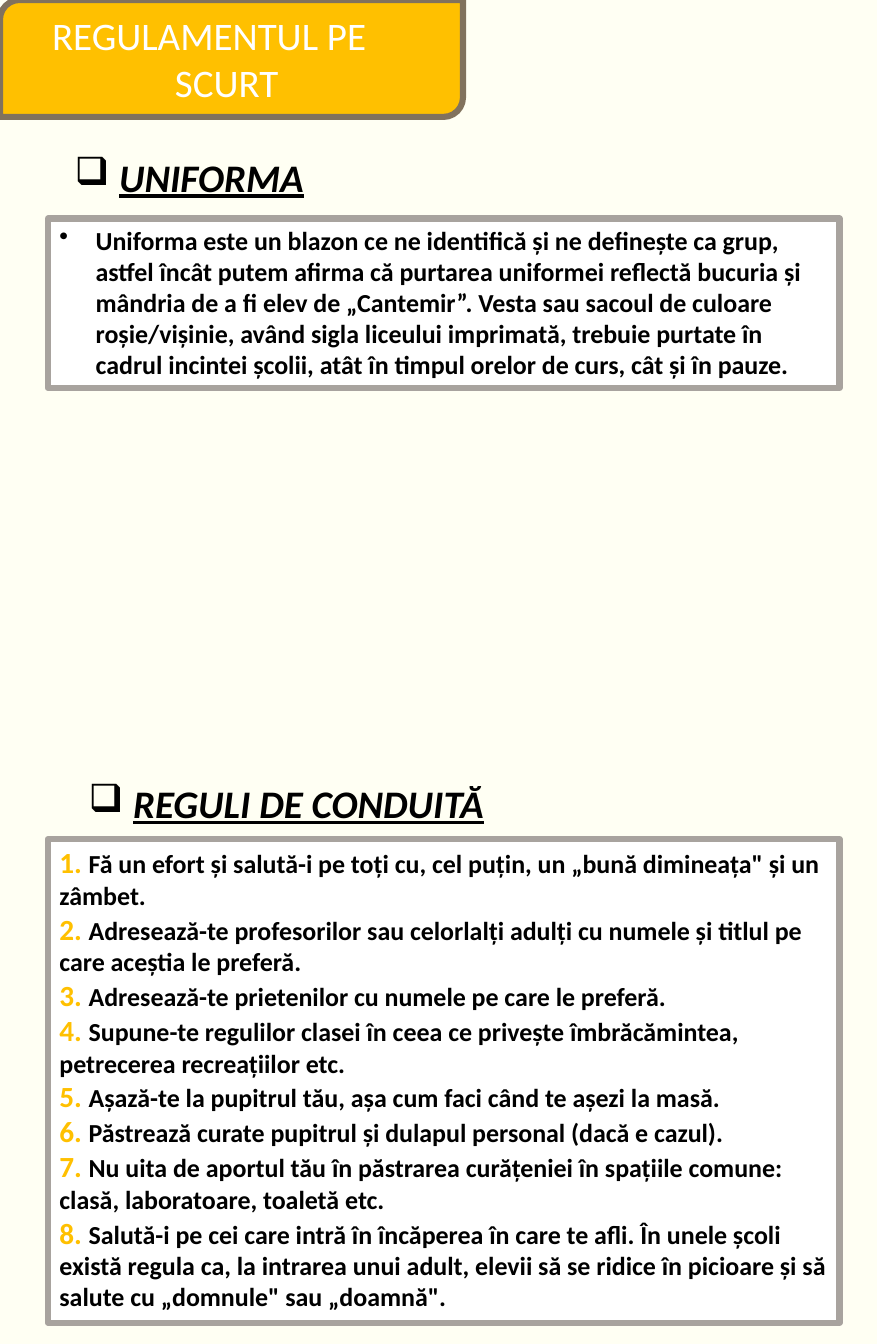
import pptx
import pptx.util
import pptx.oxml
import pptx.oxml.ns
import pptx.dml.color
import pptx.enum.shapes
import pptx.enum.text

WIDE, HIGH = 7.5, 11.5
GOLD, BLACK, WHITE = "FFC000", "000000", "FFFFFF"
TITLE = ["REGULAMENTUL PE", "SCURT"]
HEADS = [
    ("UNIFORMA", (7.2, 10.96, 48.27, 4.35)),
    ("REGULI DE CONDUITĂ", (8.8, 57.57, 48.27, 4.35)),
]
INTRO = "Uniforma este un blazon ce ne identifică și ne definește ca grup, astfel încât putem afirma că purtarea uniformei reflectă bucuria și mândria de a fi elev de „Cantemir”. Vesta sau sacoul de culoare roșie/vișinie, având sigla liceului imprimată, trebuie purtate în cadrul incintei școlii, atât în timpul orelor de curs, cât și în pauze."
RULES = [
    "Fă un efort și salută-i pe toți cu, cel puțin, un „bună dimineața\" și un zâmbet.",
    "Adresează-te profesorilor sau celorlalți adulți cu numele și titlul pe care aceștia le preferă.",
    "Adresează-te prietenilor cu numele pe care le preferă.",
    "Supune-te regulilor clasei în ceea ce privește îmbrăcămintea, petrecerea recreațiilor etc.",
    "Așază-te la pupitrul tău, așa cum faci când te așezi la masă.",
    "Păstrează curate pupitrul și dulapul personal (dacă e cazul).",
    "Nu uita de aportul tău în păstrarea curățeniei în spațiile comune: clasă, laboratoare, toaletă etc.",
    "Salută-i pe cei care intră în încăperea în care te afli. În unele școli există regula ca, la intrarea unui adult, elevii să se ridice în picioare și să salute cu „domnule\" sau „doamnă\".",
]
BANNER = (0, 0, 52.8, 8.7)
CARDS = [(5.47, 16.26, 90.27, 12.61), (5.47, 62.43, 90.27, 36)]

BODY = {"size": 16, "bold": True, "color": BLACK}
MARK = {"size": 18, "bold": True, "color": GOLD}
HEAD = {"size": 24, "bold": True, "italic": True, "underline": True, "color": BLACK}
LEAD = {"size": 24, "color": WHITE}

FORM = pptx.enum.shapes.MSO_SHAPE
ALIGN = pptx.enum.text.PP_ALIGN
FIT = pptx.enum.text.MSO_AUTO_SIZE.SHAPE_TO_FIT_TEXT
TOP = pptx.enum.text.MSO_ANCHOR.TOP
MID = pptx.enum.text.MSO_ANCHOR.MIDDLE
inch = pptx.util.Inches


def tint(code):
    return pptx.dml.color.RGBColor.from_string(code)


def place(at):
    return [inch(part * side / 100) for part, side in zip(at, (WIDE, HIGH) * 2)]


def write(para, text, style):
    run = para.add_run()
    run.text = text
    run.font.name = "Calibri"
    for key, value in style.items():
        if key == "color":
            run.font.color.rgb = tint(value)
        else:
            setattr(run.font, key, pptx.util.Pt(value) if key == "size" else value)


def indent(para, left, sign=None):
    props = para._p.get_or_add_pPr()
    props.set("marL", str(inch(left)))
    if sign:
        props.set("indent", str(-inch(left)))
        mark = pptx.oxml.parse_xml(f'<a:buChar {pptx.oxml.ns.nsdecls("a")} char="{sign}"/>')
        props.append(mark)


def panel(slide, form, at, fill, edge, setup):
    shape = slide.shapes.add_shape(form, *place(at))
    shape.shadow.inherit = False
    shape.fill.solid()
    shape.fill.fore_color.rgb = tint(fill)
    shape.line.color.rgb = tint(edge)
    shape.line.width = pptx.util.Pt(3.78)
    frame = shape.text_frame
    for key, value in setup.items():
        setattr(frame, key, value)
    return frame


def lines(frame, count, align):
    paras = [frame.paragraphs[0]] + [frame.add_paragraph() for _ in range(count - 1)]
    for para in paras:
        para.alignment = align
    return paras


def main():
    deck = pptx.Presentation()
    deck.slide_width, deck.slide_height = inch(WIDE), inch(HIGH)
    slide = deck.slides.add_slide(deck.slide_layouts[6])
    slide.background.fill.solid()
    slide.background.fill.fore_color.rgb = tint("FFFFF3")

    card = {"word_wrap": True, "vertical_anchor": TOP, "auto_size": FIT}
    intro, rules = [panel(slide, FORM.RECTANGLE, at, WHITE, "A8A39E", card) for at in CARDS]
    para, = lines(intro, 1, ALIGN.LEFT)
    indent(para, 0.31, "•")
    write(para, INTRO, BODY)
    for num, (para, rule) in enumerate(zip(lines(rules, len(RULES), ALIGN.LEFT), RULES), 1):
        write(para, f"{num}. ", MARK)
        write(para, rule, BODY)

    setup = {"word_wrap": True, "vertical_anchor": MID, "margin_right": inch(0.48)}
    banner = panel(slide, FORM.ROUND_2_DIAG_RECTANGLE, BANNER, GOLD, "81725D", setup)
    for step, (para, text) in enumerate(zip(lines(banner, len(TITLE), ALIGN.CENTER), TITLE)):
        indent(para, 0.3 * step)
        write(para, text, LEAD)

    for text, at in HEADS:
        frame = slide.shapes.add_textbox(*place(at)).text_frame
        frame.word_wrap = True
        para, = lines(frame, 1, ALIGN.LEFT)
        indent(para, 0.38, "❑")
        write(para, text, HEAD)

    deck.save("out.pptx")


if __name__ == "__main__":
    main()
